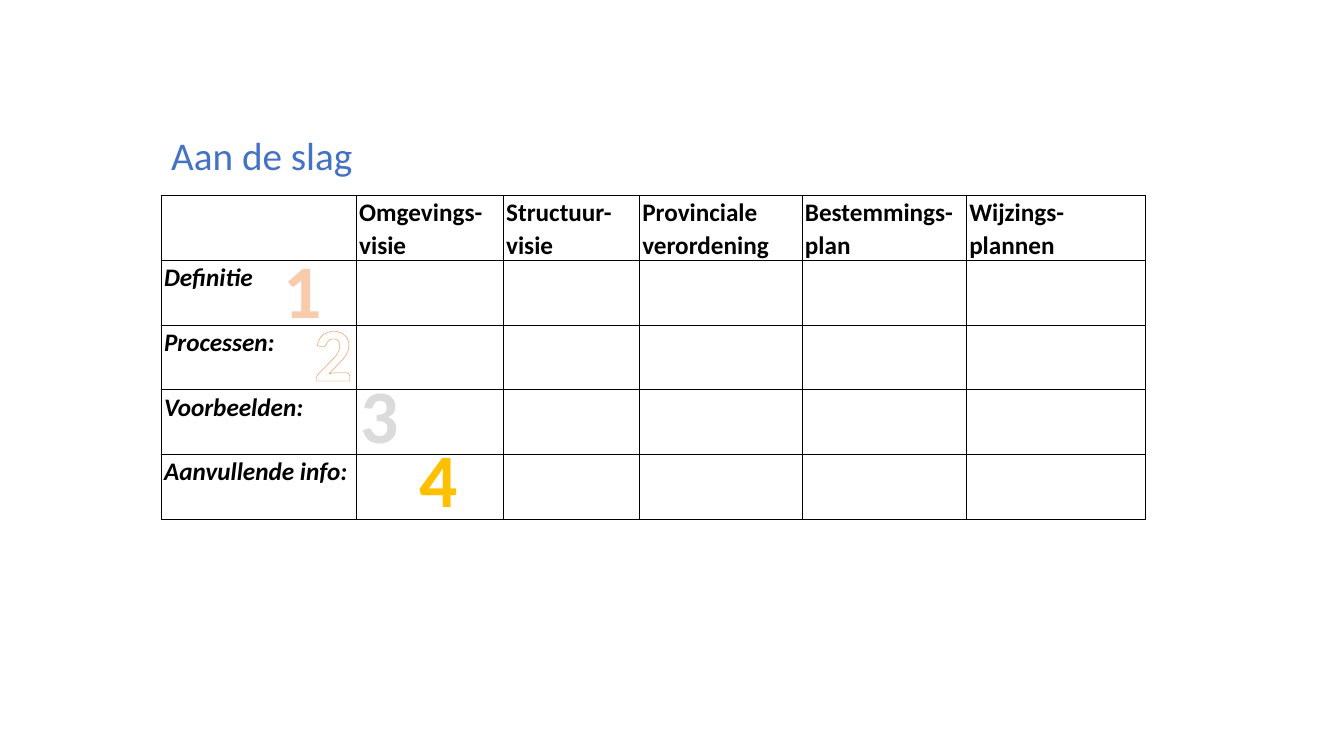
import pptx
import pptx.util
import pptx.oxml
import pptx.dml.color
import pptx.enum.dml
import pptx.enum.text

Pt = pptx.util.Pt
NS = 'xmlns:a="http://schemas.openxmlformats.org/drawingml/2006/main"'
COLORS = {"title": "4472C4", "ink": "000000", "peach": "F8CBAD",
          "white": "FFFFFF", "orange": "ED7D31", "gold": "FFC000",
          "gray": "A5A5A5", "light": "DBDBDB", "dark": "525252"}
HEADERS = ["", "Omgevings-visie", "Structuur-visie", "Provinciale verordening",
           "Bestemmings-plan", "Wijzings-plannen"]
ROWS = ["Definitie", "Processen:", "Voorbeelden:", "Aanvullende info:"]
COL_WIDTHS = [139.4, 105, 97.2, 116.2, 117.4, 128]
ROW_HEIGHT = 46.2
# text, left, top, fill, pattern background, outline colour, outline width
DIGITS = [("1", 195.1, 169.9, "peach", None, "orange", 1.75),
          ("2", 216.7, 214.6, "white", None, "orange", 0.52),
          ("3", 249.8, 259.2, "gray", "light", "dark", 1),
          ("4", 292.3, 304.6, "gold", None, None, 0)]


def rgb(name):
    return pptx.dml.color.RGBColor.from_string(COLORS[name])


def line_xml(tag, color, width):
    return pptx.oxml.parse_xml(
        f'<a:{tag} {NS} w="{Pt(width)}"><a:solidFill>'
        f'<a:srgbClr val="{COLORS[color]}"/></a:solidFill></a:{tag}>')


def write(tf, text, color, **formats):
    p = tf.paragraphs[0]
    r = p.add_run()
    r.text = text
    for name, value in {"name": "Calibri", **formats}.items():
        setattr(r.font, name, value)
    r.font.fill.solid()
    r.font.fill.fore_color.rgb = rgb(color)
    return p, r


def add_title(s, x, y, w, h):
    tf = s.shapes.add_textbox(Pt(x), Pt(y), Pt(w), Pt(h)).text_frame
    tf.word_wrap = True
    write(tf, "Aan de slag", "title", size=Pt(28))


def add_grid(s, x, y):
    rows = [HEADERS] + [[label] + [""] * (len(HEADERS) - 1) for label in ROWS]
    table = s.shapes.add_table(
        len(rows), len(HEADERS), Pt(x), Pt(y), Pt(sum(COL_WIDTHS)),
        Pt(ROW_HEIGHT * len(rows))).table
    table.first_row = table.horz_banding = False
    for col, width in zip(table.columns, COL_WIDTHS):
        col.width = Pt(width)
    for i, texts in enumerate(rows):
        table.rows[i].height = Pt(ROW_HEIGHT)
        for j, text in enumerate(texts):
            cell = table.cell(i, j)
            cell.margin_left = cell.margin_right = Pt(2)
            cell.margin_top = cell.margin_bottom = 0
            cell.fill.background()
            tcPr = cell._tc.get_or_add_tcPr()
            for k, side in enumerate(("lnL", "lnR", "lnT", "lnB")):
                tcPr.insert(k, line_xml(side, "ink", 1))
            if text:
                p, _ = write(cell.text_frame, text, "ink",
                             size=Pt(18), bold=True, italic=i > 0)
                p.line_spacing = 1.07


def add_digit(s, x, y, w, h, text, color, back, outline, width):
    tf = s.shapes.add_textbox(Pt(x), Pt(y), Pt(w), Pt(h)).text_frame
    tf.word_wrap = False
    p, r = write(tf, text, color, size=Pt(54), bold=True)
    p.alignment = pptx.enum.text.PP_ALIGN.CENTER
    if back:
        fill = r.font.fill
        fill.patterned()
        fill.pattern = pptx.enum.dml.MSO_PATTERN.NARROW_HORIZONTAL
        fill.fore_color.rgb = rgb(color)
        fill.back_color.rgb = rgb(back)
    if outline:
        r._r.get_or_add_rPr().insert(0, line_xml("ln", outline, width))


def main():
    prs = pptx.Presentation()
    prs.slide_width, prs.slide_height = Pt(960), Pt(540)
    s = prs.slides.add_slide(prs.slide_layouts[6])
    # Heading and table
    add_title(s, 115.2, 90, 483.8, 41)
    add_grid(s, 115.2, 139.9)
    # Step numbers over the table
    for text, x, y, *style in DIGITS:
        add_digit(s, x, y, 42.5, 72.7, text, *style)
    prs.save("out.pptx")


if __name__ == "__main__":
    main()
